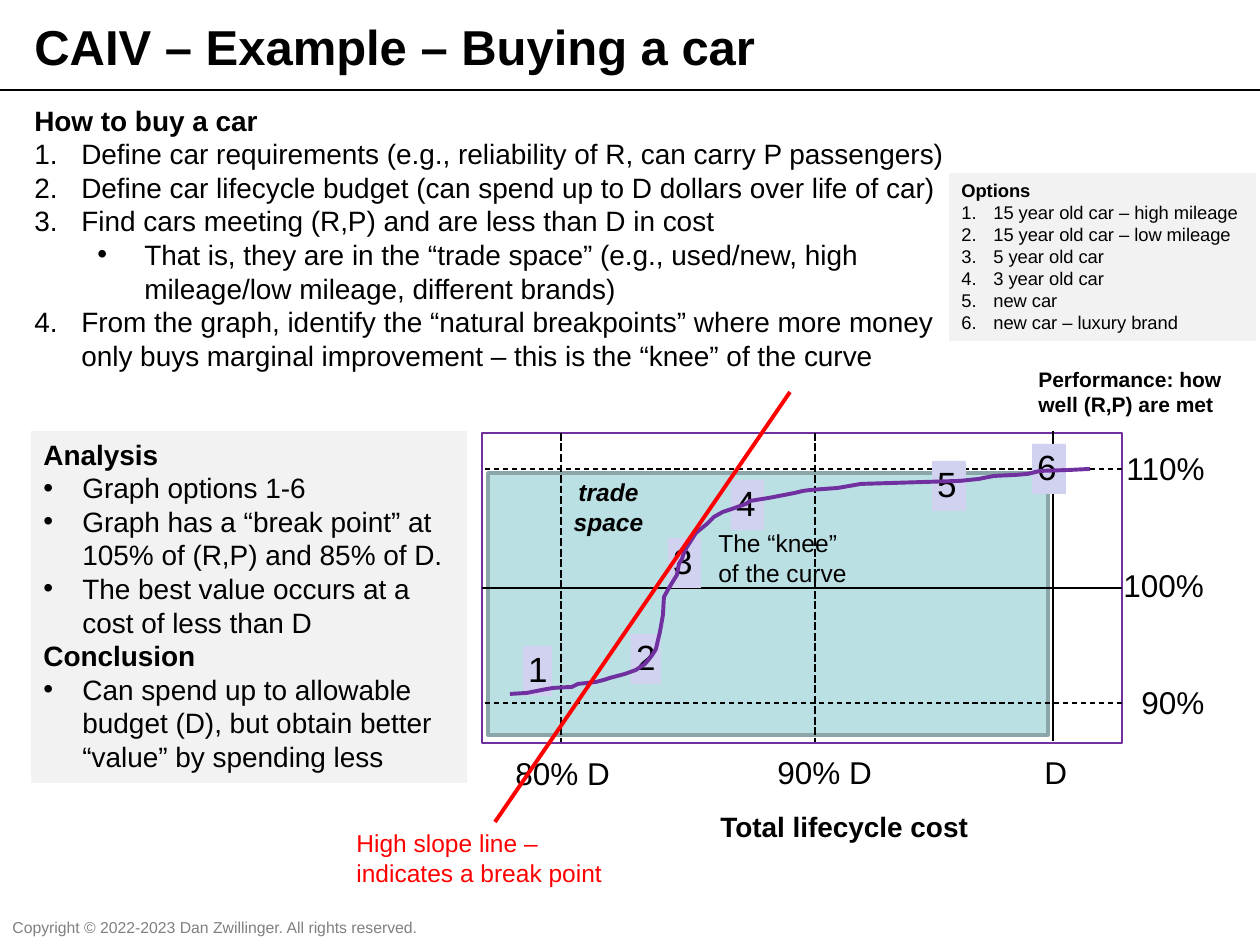
"""Build the slide on cost as an independent variable, with car buying as the example."""
from lxml.etree import SubElement
from pptx import Presentation
from pptx.dml.color import RGBColor
from pptx.enum.dml import MSO_LINE as DASH
from pptx.enum.shapes import MSO_CONNECTOR, MSO_SHAPE
from pptx.enum.text import MSO_ANCHOR as ANCHOR, PP_ALIGN as ALIGN
from pptx.oxml.ns import qn
from pptx.util import Emu, Pt


class Theme:
    font = "Arial"
    black = RGBColor.from_string("000000")
    gray = RGBColor.from_string("808080")
    red = RGBColor.from_string("FF0000")
    purple = RGBColor.from_string("7030A0")
    teal = RGBColor.from_string("BBE0E3")
    teal_edge = RGBColor.from_string("8AA6A8")
    lilac = RGBColor.from_string("D1D1F0")
    panel = RGBColor.from_string("F2F2F2")
    title, mark, label, body, note, axis, option, footer = 28, 20, 18, 16, 14, 12, 10.5, 9


PX = 914400 / 126
prs = Presentation()
prs.slide_width, prs.slide_height = Emu(round(1260 * PX)), Emu(round(945 * PX))
s = prs.slides.add_slide(prs.slide_layouts[6])


def write(box, text, size, color=Theme.black, bold=False, italic=False, fill=None, wrap=True,
          align=ALIGN.LEFT, anchor=ANCHOR.TOP, inset=None, spacing=None, indent=0):
    place = [Emu(round(v * PX)) for v in box]
    if fill is None:
        sp = s.shapes.add_textbox(*place)
    else:
        sp = s.shapes.add_shape(MSO_SHAPE.RECTANGLE, *place)
        sp.shadow.inherit = False
        sp.fill.solid()
        sp.fill.fore_color.rgb = fill
        sp.line.fill.background()
    tf = sp.text_frame
    tf.word_wrap, tf.vertical_anchor = wrap, anchor
    if inset is not None:
        tf.margin_left = tf.margin_right = tf.margin_top = tf.margin_bottom = Emu(round(inset * PX))
    items = [("", text)] if isinstance(text, str) else text
    for i, (style, words) in enumerate(items):
        p = tf.paragraphs[0] if i == 0 else tf.add_paragraph()
        p.alignment = align
        if spacing:
            p.line_spacing = spacing
        if style in ("1.", "•", "sub"):
            p.level = 1 if style == "sub" else 0
            pPr = p._p.get_or_add_pPr()
            pPr.set("marL", str(round((indent + 63 * p.level) * PX)))
            pPr.set("indent", str(round(-indent * PX)))
            if style == "1.":
                SubElement(pPr, qn("a:buFont"), typeface="+mj-lt")
                SubElement(pPr, qn("a:buAutoNum"), type="arabicPeriod")
            else:
                SubElement(pPr, qn("a:buFont"), typeface=Theme.font)
                SubElement(pPr, qn("a:buChar"), char="•")
        r = p.add_run()
        r.text = words
        f = r.font
        f.name, f.size, f.color.rgb = Theme.font, Pt(size), color
        f.bold, f.italic = bold or style == "head", italic


def connect(x1, y1, x2, y2, width=0.75, color=Theme.black, dash=None):
    ends = [Emu(round(v * PX)) for v in (x1, y1, x2, y2)]
    c = s.shapes.add_connector(MSO_CONNECTOR.STRAIGHT, *ends)
    c.line.width, c.line.color.rgb = Pt(width), color
    if dash:
        c.line.dash_style = dash
    SubElement(c._element.spPr, qn("a:effectLst"))
    return c


for box, fill, edge, width in [
    ((488, 473, 560, 262), Theme.teal, Theme.teal_edge, 2),
    ((482, 433, 640, 310), None, Theme.purple, 1.5),
]:
    frame = s.shapes.add_shape(MSO_SHAPE.RECTANGLE, *[Emu(round(v * PX)) for v in box])
    frame.shadow.inherit = False
    if fill is None:
        frame.fill.background()
    else:
        frame.fill.solid()
        frame.fill.fore_color.rgb = fill
    frame.line.color.rgb, frame.line.width = edge, Pt(width)

connect(0, 90, 1260, 90)
write((22, 10, 1238, 72), "CAIV – Example – Buying a car", Theme.title, bold=True)
write((0, 912, 436, 32), "Copyright © 2022-2023 Dan Zwillinger. All rights reserved.",
      Theme.footer, color=Theme.gray, wrap=False)
write((22, 97, 944, 285), [
    ("head", "How to buy a car"),
    ("1.", "Define car requirements (e.g., reliability of R, can carry P passengers)"),
    ("1.", "Define car lifecycle budget (can spend up to D dollars over life of car)"),
    ("1.", "Find cars meeting (R,P) and are less than D in cost"),
    ("sub", "That is, they are in the “trade space” (e.g., used/new, high mileage/low mileage, "
            "different brands)"),
    ("1.", "From the graph, identify the “natural breakpoints” where more money only buys "
           "marginal improvement – this is the “knee” of the curve"),
], Theme.body, indent=47)

write((708, 803, 277, 47), "Total lifecycle cost", Theme.body, bold=True, wrap=False)
write((1026, 360, 225, 63), "Performance: how well (R,P) are met", Theme.axis, bold=True)
for text, x, y, w in [("80% D", 503, 748, 121), ("90% D", 765, 747, 121), ("D", 1032, 747, 48),
                      ("110%", 1114, 443, 104), ("100%", 1111, 560, 107), ("90%", 1129, 677, 89)]:
    write((x, y, w, 50), text, Theme.label, wrap=False)

for x in (561, 815):
    connect(x, 433, x, 742, 1.5, dash=DASH.SQUARE_DOT)
connect(1053, 431, 1053, 741, 1.5)
for y in (703, 469):
    connect(1122, y, 482, y, dash=DASH.DASH)
middle = connect(1122, 588, 482, 588)
middle.begin_connect(frame, 3)
middle.end_connect(frame, 1)

marks = [(523, 646, 29), (631, 634, 30), (668, 538, 33), (731, 480, 33), (932, 461, 34),
         (1032, 444, 34)]
for number, (x, y, w) in enumerate(marks, 1):
    write((x, y, w, 50), str(number), Theme.mark, fill=Theme.lilac, wrap=False,
          anchor=ANCHOR.MIDDLE, inset=5, spacing=0.95)

curve = [
    (510, 694), (527, 693), (542, 690), (553, 688), (572, 687), (578, 684), (596, 682), (604, 680),
    (610, 678), (625, 674), (636, 670), (645, 664), (650, 658), (653, 654), (656, 649), (660, 632),
    (663, 615), (664, 597), (669, 588), (677, 575), (679, 564), (682, 559), (684, 553), (687, 547),
    (696, 533), (707, 524), (714, 517), (723, 512), (732, 509), (746, 504), (750, 501), (769, 498),
    (795, 493), (803, 491), (811, 490), (838, 488), (861, 484), (960, 481), (979, 479), (984, 478),
    (994, 476), (1016, 475), (1028, 474), (1040, 471), (1070, 470), (1090, 469),
]
builder = s.shapes.build_freeform(*curve[0], scale=PX)
builder.add_line_segments(curve[1:], close=False)
sp = builder.convert_to_shape()
sp.shadow.inherit = False
sp.fill.background()
sp.line.color.rgb, sp.line.width = Theme.purple, Pt(2.25)

write((31, 431, 436, 352), [
    ("head", "Analysis"),
    ("•", "Graph options 1-6"),
    ("•", "Graph has a “break point” at 105% of (R,P) and 85% of D."),
    ("•", "The best value occurs at a cost of less than D"),
    ("head", "Conclusion"),
    ("•", "Can spend up to allowable budget (D), but obtain better “value” by spending less"),
], Theme.body, fill=Theme.panel, indent=39)
connect(495, 822, 790, 392, 2.25, Theme.red)
write((344, 822, 277, 72), "High slope line – indicates a break point", Theme.note, color=Theme.red)
write((949, 173, 307, 168), [
    ("head", "Options"),
    ("1.", "15 year old car – high mileage"),
    ("1.", "15 year old car – low mileage"),
    ("1.", "5 year old car"),
    ("1.", "3 year old car"),
    ("1.", "new car"),
    ("1.", "new car – luxury brand"),
], Theme.option, fill=Theme.panel, indent=32)
write((537, 471, 143, 72), "trade space", Theme.note, bold=True, italic=True, align=ALIGN.CENTER)
write((706, 522, 162, 72), "The “knee” of the curve", Theme.note)

prs.save("out.pptx")
